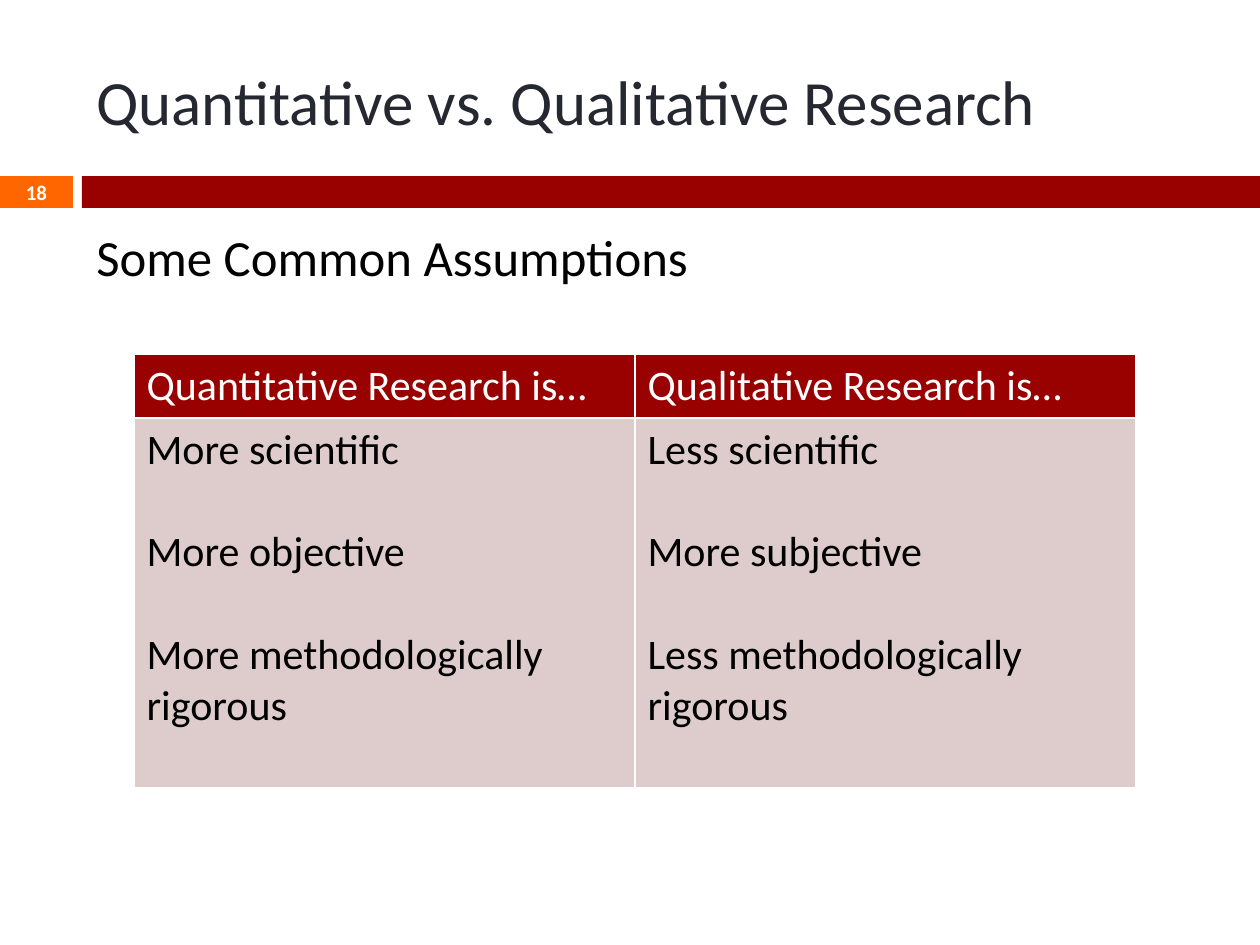
from lxml import etree
from pptx import Presentation
from pptx.dml.color import RGBColor
from pptx.enum.shapes import MSO_SHAPE
from pptx.enum.text import MSO_ANCHOR, PP_ALIGN
from pptx.oxml.ns import qn
from pptx.util import Pt

RECT = MSO_SHAPE.RECTANGLE
TOP, MID = MSO_ANCHOR.TOP, MSO_ANCHOR.MIDDLE
LEFT, MIDST = PP_ALIGN.LEFT, PP_ALIGN.CENTER
SCALE = 914400 // 126
FONT = "Calibri"
RED, ORANGE, ROSE = "990000", "FF6600", "DECCCC"
INK, BLACK, WHITE = "252731", "000000", "FFFFFF"
HEADS = ["Quantitative Research is…", "Qualitative Research is…"]
POINTS = [
    ["More scientific", "More objective", "More methodologically rigorous"],
    ["Less scientific", "More subjective", "Less methodologically rigorous"],
]


def px(*sizes):
    """Turn pixel lengths into EMU."""
    return [size * SCALE for size in sizes]


def color(code):
    """Turn a hex string into a colour."""
    return RGBColor.from_string(code)


def paint(item, code):
    """Give a shape or cell a solid fill."""
    item.fill.solid()
    item.fill.fore_color.rgb = color(code)


def write(frame, lines, size, code, bold=False, align=LEFT, before=0, gap=0):
    """Write one paragraph per line, with a gap between them."""
    for i, line in enumerate(lines):
        para = frame.paragraphs[0] if i == 0 else frame.add_paragraph()
        para.alignment = align
        para.space_before = Pt(gap if i else before)
        run = para.add_run()
        run.text = line
        looks = {"name": FONT, "size": Pt(size), "bold": bold}
        for key, value in looks.items():
            setattr(run.font, key, value)
        run.font.color.rgb = color(code)


def bar(slide, box, code):
    """Add a plain filled bar."""
    shape = slide.shapes.add_shape(RECT, *px(*box))
    shape.shadow.inherit = False
    shape.line.fill.background()
    paint(shape, code)


def label(slide, box, text, size, code, anchor=TOP, **look):
    """Add a wrapped text box with one line of text."""
    frame = slide.shapes.add_textbox(*px(*box)).text_frame
    frame.word_wrap = True
    frame.vertical_anchor = anchor
    write(frame, [text], size, code, **look)


def edge(cell, code, width):
    """Draw a line on all four sides of a cell."""
    props = cell._tc.get_or_add_tcPr()
    for side in ("a:lnL", "a:lnR", "a:lnT", "a:lnB"):
        line = etree.SubElement(props, qn(side), w=str(Pt(width)))
        fill = etree.SubElement(line, qn("a:solidFill"))
        etree.SubElement(fill, qn("a:srgbClr"), val=code)


def grid(slide, box, rows):
    """Add the table that compares the two kinds of research."""
    table = slide.shapes.add_table(2, len(HEADS), *px(*box)).table
    for row, high in zip(table.rows, px(*rows)):
        row.height = high
    for col, (head, points) in enumerate(zip(HEADS, POINTS)):
        parts = [([head], WHITE, RED), (points, BLACK, ROSE)]
        for row, (lines, ink, back) in enumerate(parts):
            cell = table.cell(row, col)
            edge(cell, WHITE, 1)
            paint(cell, back)
            write(cell.text_frame, lines, 24, ink, gap=29.3)


def main():
    """Build the slide and save it."""
    deck = Presentation()
    deck.slide_width, deck.slide_height = px(1260, 945)
    slide = deck.slides.add_slide(deck.slide_layouts[6])
    bar(slide, (0, 176, 73, 32), ORANGE)
    bar(slide, (82, 176, 1178, 32), RED)
    label(slide, (84, 32, 1124, 136),
          "Quantitative vs. Qualitative Research", 36, INK, MID)
    label(slide, (84, 220, 1124, 620),
          "Some Common Assumptions", 29, BLACK, before=7)
    grid(slide, (134, 354, 1002, 434), (64, 370))
    label(slide, (0, 175, 73, 34), "18", 11.9, WHITE, MID,
          bold=True, align=MIDST)
    deck.save("out.pptx")


if __name__ == "__main__":
    main()
